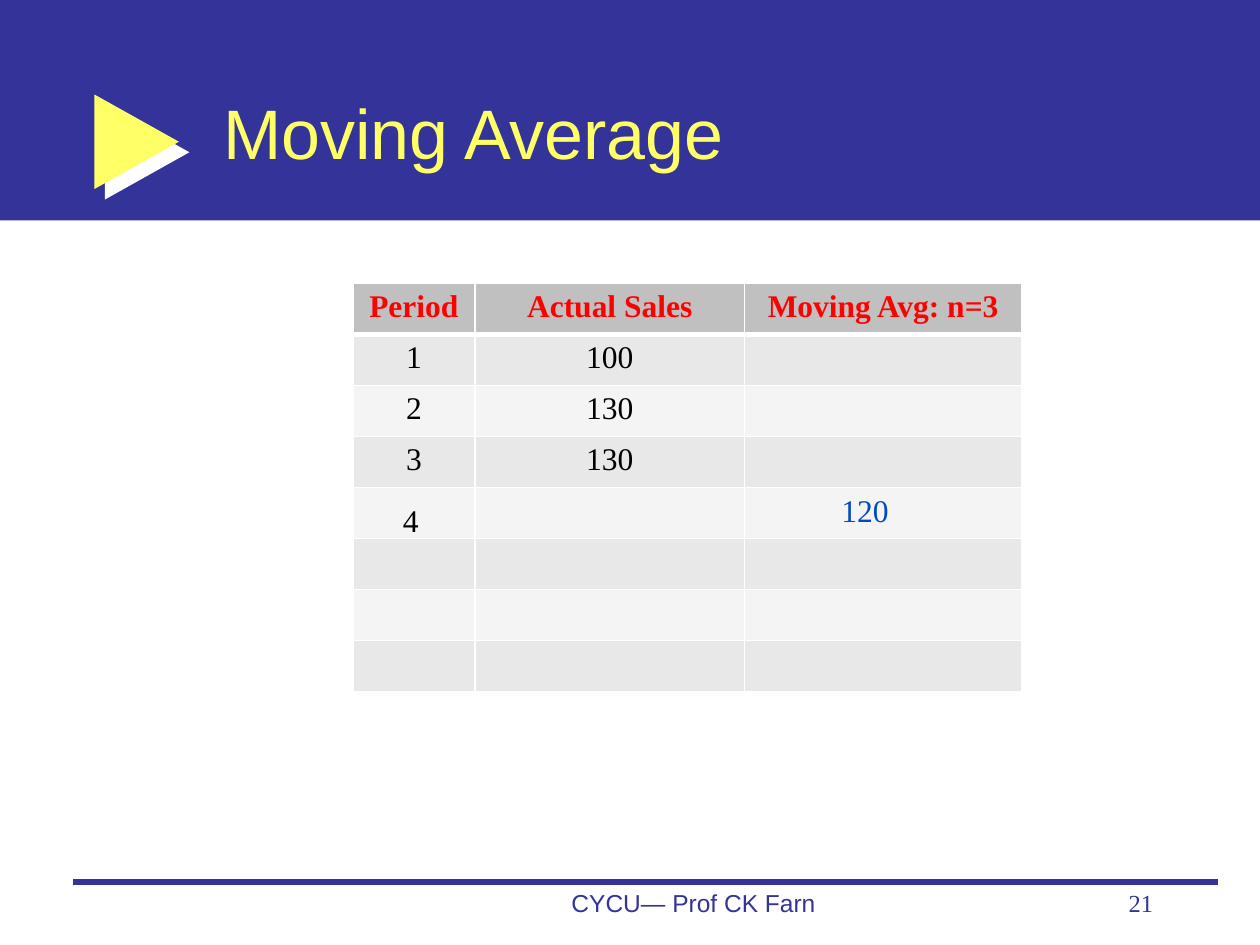
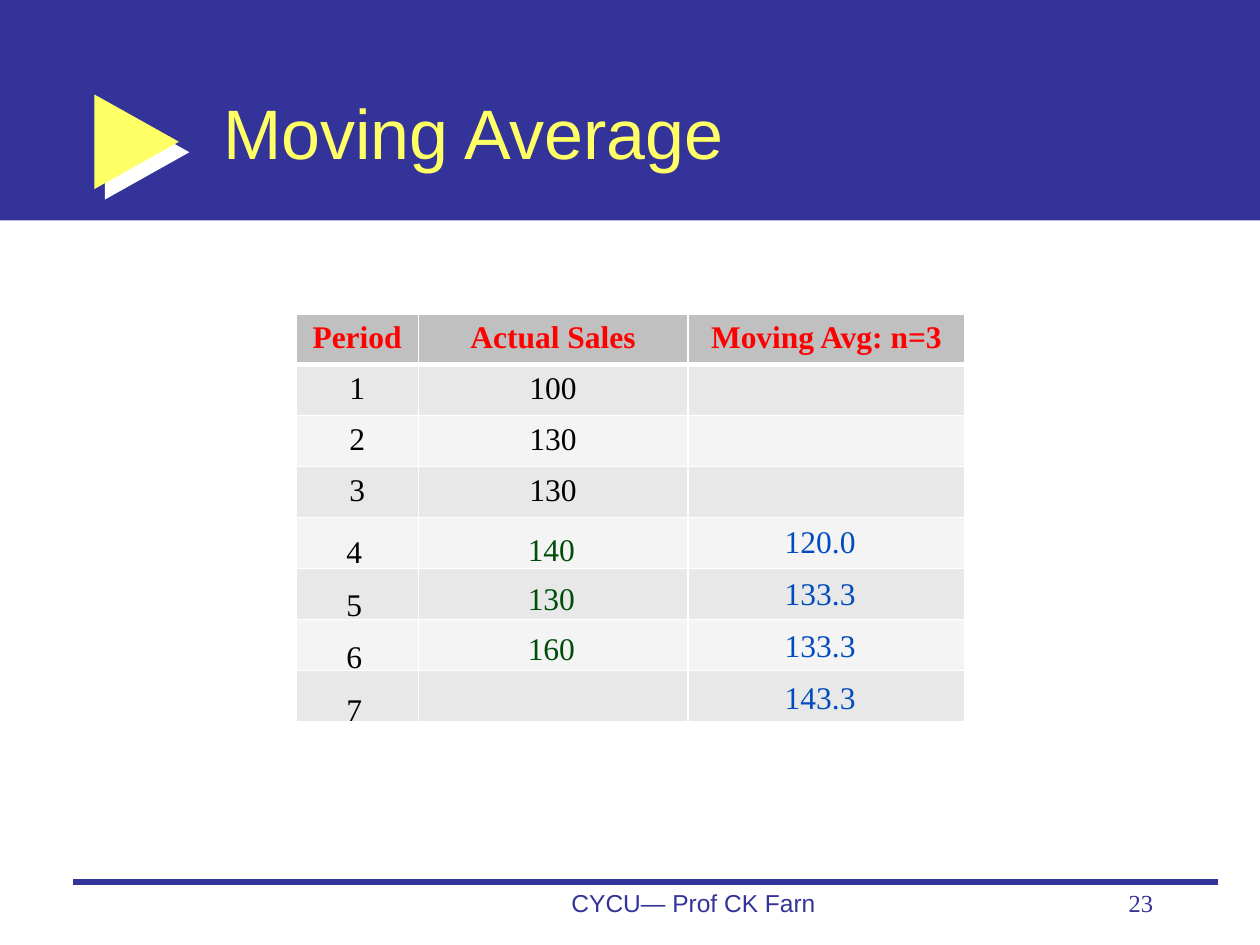
import pptx
import pptx.util
import pptx.dml.color
import pptx.enum.shapes
import pptx.enum.text
import pptx.oxml
import pptx.oxml.ns

Inches = pptx.util.Inches
Shape = pptx.enum.shapes.MSO_SHAPE
Align = pptx.enum.text.PP_ALIGN

# Content
TITLE = "Moving Average"
FOOTER = "CYCU— Prof CK Farn"
HEAD = ["Period", "Actual Sales", "Moving Avg: n=3"]
ROWS = [["1", "100", ""], ["2", "130", ""], ["3", "130", ""]] + [[""] * 3] * 4
SLIDES = [
    {"page": "21", "at": (2.8, 2.25),
     "late": {"period": ["4"], "avg": ["120"]}},
    {"page": "23", "at": (2.35, 2.49),
     "late": {"period": ["4", "5", "6", "7"],
              "avg": ["120.0", "133.3", "133.3", "143.3"],
              "sales": ["140", "130", "160"]}},
]

# Theme
THEME = {
    "navy": "333399", "yellow": "FFFF66", "white": "FFFFFF",
    "grey": "C0C0C0", "bands": ("E8E8E8", "F4F4F4"),
    "title": {"size": 40, "name": "Arial", "color": "FFFF66"},
    "footer": {"size": 14, "name": "Arial", "color": "333399"},
    "page": {"size": 14, "name": "Times New Roman", "color": "333399"},
    "head": {"size": 18, "name": "Times New Roman", "color": "FF0000", "bold": True},
    "cell": {"size": 18, "name": "Times New Roman", "color": "000000", "bold": False},
}
COLS = [0.97, 2.14, 2.2]
ROW = 0.405

# Late figures: offset from the table corner, row pitch, box width, colour
LATE = {
    "period": (0.3, 1.68, 0.42, 0.33, "000000"),
    "avg": (3.78, 1.6, 0.415, 0.87, "004CBF"),
    "sales": (1.74, 1.67, 0.39, 0.71, "004D0A"),
}


def tint(code):
    return pptx.dml.color.RGBColor.from_string(code)


def put(frame, text, style, align=Align.LEFT):
    para = frame.paragraphs[0]
    para.alignment = align
    if not text:
        return
    run = para.add_run()
    run.text = text
    for key, val in style.items():
        if key == "color":
            run.font.color.rgb = tint(val)
        else:
            setattr(run.font, key, pptx.util.Pt(val) if key == "size" else val)


def label(slide, box, text, style, align=Align.LEFT):
    frame = slide.shapes.add_textbox(*map(Inches, box)).text_frame
    frame.word_wrap = True
    put(frame, text, style, align)


def solid(slide, kind, box, code):
    shape = slide.shapes.add_shape(kind, *map(Inches, box))
    shape.shadow.inherit = False
    shape.fill.solid()
    shape.fill.fore_color.rgb = tint(code)
    shape.line.fill.background()
    return shape


def parse_xml(tag, attrs, inner):
    space = pptx.oxml.ns.nsdecls("a")
    return pptx.oxml.parse_xml(f"<a:{tag} {space} {attrs}>{inner}</a:{tag}>")


def frame_slide(slide, page):
    # Band, marker and rule
    solid(slide, Shape.RECTANGLE, (0, 0, 10, 1.75), THEME["navy"])
    mark = solid(slide, Shape.RIGHT_ARROW, (0.75, 0.75, 0.67, 0.75), THEME["yellow"])
    mark.adjustments[0], mark.adjustments[1] = 0.38, 1
    glow = mark.element.spPr.find(pptx.oxml.ns.qn("a:effectLst"))
    glow.append(parse_xml(
        "outerShdw", 'dist="107950" dir="2700000" algn="ctr" rotWithShape="0"',
        f'<a:srgbClr val="{THEME["white"]}"/>'))
    rule = slide.shapes.add_connector(
        pptx.enum.shapes.MSO_CONNECTOR.STRAIGHT, *map(Inches, (0.58, 7, 9.67, 7)))
    rule.line.color.rgb = tint(THEME["navy"])
    rule.line.width = pptx.util.Pt(3)
    rule.element.spPr.append(parse_xml("effectLst", "", ""))

    # Title, raised above the band
    title = slide.shapes.title
    for key, val in zip(("left", "top", "width", "height"), (1.67, 0.42, 7.58, 1.25)):
        setattr(title, key, Inches(val))
    title.text_frame.vertical_anchor = pptx.enum.text.MSO_ANCHOR.MIDDLE
    put(title.text_frame, TITLE, THEME["title"])
    title.element.getparent().append(title.element)

    # Footer
    label(slide, (3.92, 7, 3.17, 0.5), FOOTER, THEME["footer"], Align.CENTER)
    label(slide, (7.17, 7, 2.08, 0.5), page, THEME["page"], Align.RIGHT)


def edge(cell, row):
    wide = {"L": 1, "R": 1, "T": 3 if row == 1 else 1, "B": 3 if row == 0 else 1}
    for side, size in wide.items():
        cell._tc.get_or_add_tcPr().append(parse_xml(
            f"ln{side}", f'w="{pptx.util.Pt(size)}"',
            f'<a:solidFill><a:srgbClr val="{THEME["white"]}"/></a:solidFill>'))


def draw_table(slide, left, top):
    data = [HEAD] + ROWS
    box = (left, top, sum(COLS), ROW * len(data))
    table = slide.shapes.add_table(len(data), len(COLS), *map(Inches, box)).table
    for col, wide in zip(table.columns, COLS):
        col.width = Inches(wide)
    for r, row in enumerate(data):
        table.rows[r].height = Inches(ROW)
        for c, text in enumerate(row):
            cell = table.cell(r, c)
            edge(cell, r)
            cell.fill.solid()
            cell.fill.fore_color.rgb = tint(
                THEME["bands"][(r - 1) % 2] if r else THEME["grey"])
            put(cell.text_frame, text, THEME["cell" if r else "head"], Align.CENTER)


def main():
    deck = pptx.Presentation()
    deck.slide_width, deck.slide_height = Inches(10), Inches(7.5)
    for item in SLIDES:
        slide = deck.slides.add_slide(deck.slide_layouts[5])
        frame_slide(slide, item["page"])
        left, top = item["at"]
        draw_table(slide, left, top)
        # Figures laid over the lower rows
        for name, texts in item["late"].items():
            dx, dy, pitch, wide, code = LATE[name]
            for i, text in enumerate(texts):
                box = (left + dx, top + dy + i * pitch, wide, 0.4)
                label(slide, box, text, {**THEME["cell"], "color": code})
    deck.save("out.pptx")


if __name__ == "__main__":
    main()
